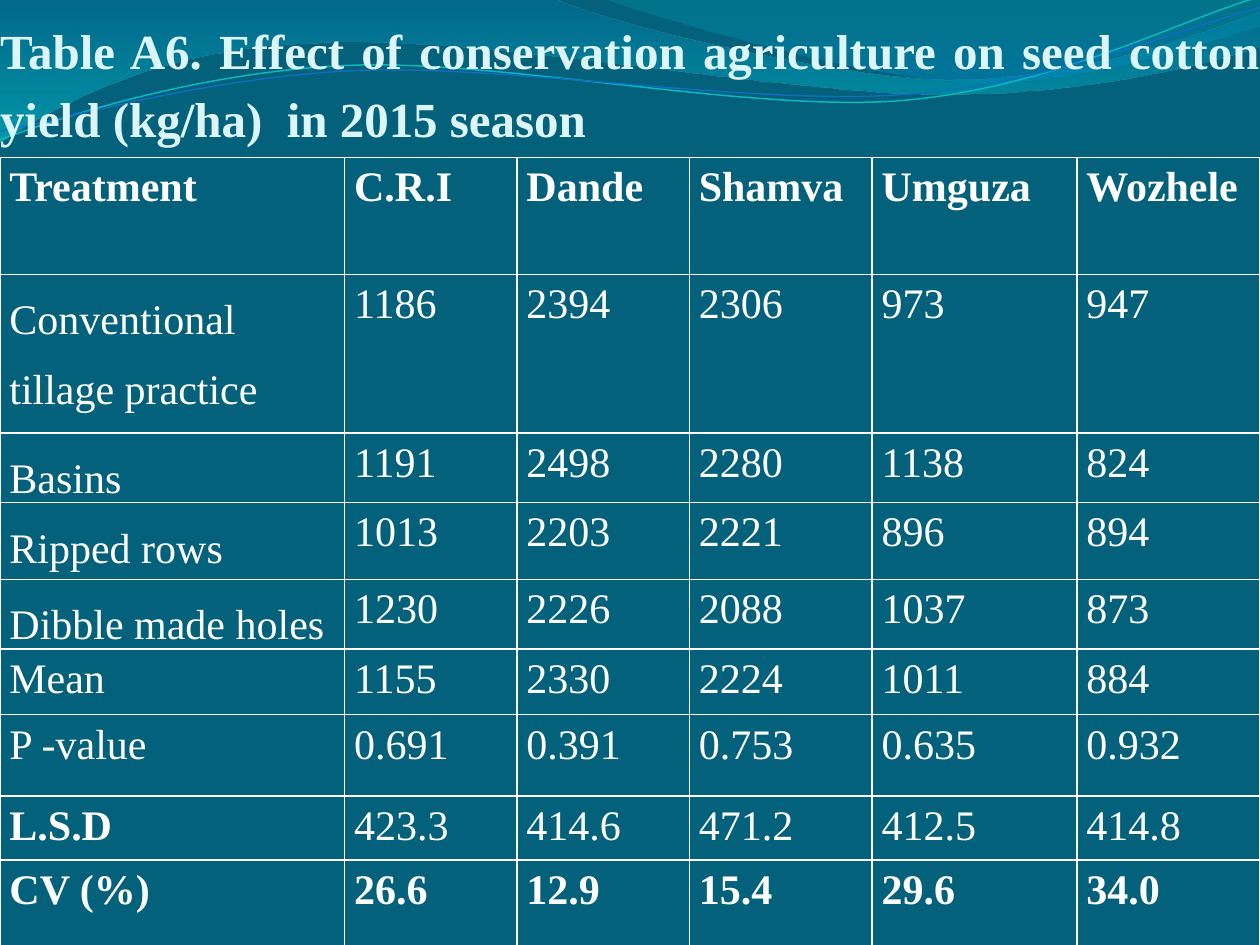
from lxml import etree
from pptx import Presentation
from pptx.dml.color import RGBColor
from pptx.enum.text import MSO_ANCHOR, MSO_AUTO_SIZE, PP_ALIGN
from pptx.oxml.ns import qn
from pptx.util import Pt

JUSTIFY = PP_ALIGN.JUSTIFY
BOTTOM = MSO_ANCHOR.BOTTOM
NO_AUTOFIT = MSO_AUTO_SIZE.NONE

FONT = "Times New Roman"
BACKGROUND, TITLE_COLOR, WHITE = "04617B", "DBF5F9", "FFFFFF"

TITLE = "Table A6. Effect of conservation agriculture on seed cotton yield (kg/ha)  in 2015 season"
ROWS = [
    ("Treatment", "C.R.I", "Dande", "Shamva", "Umguza", "Wozhele"),
    ("Conventional tillage practice", "1186", "2394", "2306", "973", "947"),
    ("Basins", "1191", "2498", "2280", "1138", "824"),
    ("Ripped rows ", "1013", "2203", "2221", "896", "894"),
    ("Dibble made holes", "1230", "2226", "2088", "1037", "873"),
    ("Mean", "1155", "2330", "2224", "1011", "884"),
    ("P -value", "0.691", "0.391", "0.753", "0.635", "0.932"),
    ("L.S.D", "423.3", "414.6", "471.2", "412.5", "414.8"),
    ("CV (%)", "26.6", "12.9", "15.4", "29.6", "34.0"),
]
COL_WIDTHS = [197, 98.5, 98.5, 104.5, 117, 104.5]
ROW_HEIGHTS = [66.8, 90.6, 39.8, 43.8, 39.8, 37.6, 46.5, 36.6, 49.4]
TREATMENT_ROWS = range(1, 5)
BOLD_ROWS = (0, 8)
BOLD_CELLS = [(7, 0)]

# Wave segments: two numbers are a straight line, six a cubic curve.
# Gradient stops: position, colour, opacity in percent.
BANDS = [
    ([(0, 0), (316.8, -0.7), (342.7, 12.2, 478.1, 45.4, 545.8, 45.4),
      (614.2, 45.4, 690, 18.7, 720, 6.5), (720.7, 25.9),
      (707.8, 31.7, 626.4, 54.7, 537.1, 54), (447.8, 54, 275, 20.2, 185, 24.5),
      (92.9, 25.9, 33.1, 59.8, -0.7, 81.4)],
     [(0, "0074A1", 45), (1, "00C6CF", 55)]),
    ([(344.9, -0.7), (366.5, 7.9, 491, 44.6, 553.7, 46.8),
      (616.3, 49.7, 691.9, 23, 720, 15.1), (720, 0)],
     [(0, "00A1A9", 30), (0.8, "008BBF", 45)]),
]
WAVE_LINES = [
    ([(0, 79.9), (34.6, 67, 113.8, 41, 199.4, 37.4),
      (284.4, 33.8, 427, 64.1, 513.4, 57.6), (599.8, 51.1, 675.4, 10.8, 718.6, -1.4)],
     "0AB8BF", 0.85),
    ([(0, 74.9), (33.8, 69.1, 118.1, 43.9, 203.8, 40.3),
      (290.2, 36.7, 429.8, 60.5, 516.2, 54), (601.9, 48.2, 677.5, 15.1, 720, 4.3)],
     "0F6FC6", 0.75),
]


def rgb(value):
    return RGBColor.from_string(value)


def add_wave(s, segments, close):
    """Draw the end points as a freeform, then bend its curved segments."""
    ends = [(Pt(seg[-2]), Pt(seg[-1])) for seg in segments]
    builder = s.shapes.build_freeform(*ends[0])
    builder.add_line_segments(ends[1:], close=close)
    sp = builder.convert_to_shape()
    sp.shadow.inherit = False
    nodes = list(sp._element.iter(qn("a:lnTo")))
    for node, seg in zip(nodes, segments[1:]):
        if len(seg) == 6:
            curve = etree.Element(qn("a:cubicBezTo"))
            for x, y in zip(seg[::2], seg[1::2]):
                etree.SubElement(curve, qn("a:pt"), x=str(Pt(x) - sp.left),
                                 y=str(Pt(y) - sp.top))
            node.getparent().replace(node, curve)
    return sp


def add_band(s, segments, stops):
    sp = add_wave(s, segments, True)
    sp.line.fill.background()
    sp.fill.gradient()
    sp.fill.gradient_angle = 270
    for stop, (position, color, _) in zip(sp.fill.gradient_stops, stops):
        stop.position = position
        stop.color.rgb = rgb(color)
    colors = sp._element.spPr.iter(qn("a:srgbClr"))
    for node, (_, _, opacity) in zip(list(colors), stops):
        etree.SubElement(node, qn("a:alpha"), val=str(opacity * 1000))


def add_wave_line(s, segments, color, width):
    sp = add_wave(s, segments, False)
    sp.fill.background()
    sp.line.color.rgb = rgb(color)
    sp.line.width = Pt(width)


def write(tf, text, size, color, bold, spacing, after=0):
    p = tf.paragraphs[0]
    p.alignment = JUSTIFY
    p.line_spacing = spacing
    p.space_before = Pt(0)
    p.space_after = Pt(after)
    r = p.add_run()
    r.text = text
    r.font.name = FONT
    r.font.size = Pt(size)
    r.font.bold = bold
    r.font.color.rgb = rgb(color)


def add_borders(cell):
    tc_pr = cell._tc.get_or_add_tcPr()
    for side in ("lnL", "lnR", "lnT", "lnB"):
        ln = etree.SubElement(tc_pr, qn(f"a:{side}"), w=str(Pt(1)))
        fill = etree.SubElement(ln, qn("a:solidFill"))
        etree.SubElement(fill, qn("a:srgbClr"), val=WHITE)


def add_title(s):
    title = s.shapes.title
    title.left, title.top, title.width, title.height = Pt(0), Pt(0), Pt(720), Pt(84.2)
    tf = title.text_frame
    tf.word_wrap = True
    tf.auto_size = NO_AUTOFIT
    tf.vertical_anchor = BOTTOM
    tf.margin_left = tf.margin_right = tf.margin_bottom = Pt(0)
    tf.margin_top = Pt(3.6)
    write(tf, TITLE, 28, TITLE_COLOR, True, 1.15)
    s.shapes._spTree.append(title._element)  # in front of the waves


def add_yield_table(s):
    table = s.shapes.add_table(len(ROWS), len(COL_WIDTHS), Pt(0), Pt(90),
                               Pt(sum(COL_WIDTHS)), Pt(sum(ROW_HEIGHTS))).table
    table.horz_banding = False
    for column, width in zip(table.columns, COL_WIDTHS):
        column.width = Pt(width)
    for i, (row, height) in enumerate(zip(ROWS, ROW_HEIGHTS)):
        table.rows[i].height = Pt(height)
        for j, text in enumerate(row):
            cell = table.cell(i, j)
            add_borders(cell)
            cell.fill.background()
            cell.margin_left = cell.margin_right = Pt(5.4)
            cell.margin_top = cell.margin_bottom = Pt(0)
            treatment = j == 0 and i in TREATMENT_ROWS
            tight = treatment or (i == 0 and j > 0)
            bold = i in BOLD_ROWS or (i, j) in BOLD_CELLS
            write(cell.text_frame, text, 24, WHITE, bold,
                  1.5 if treatment else 1.15, 0 if tight else 6)


def main():
    prs = Presentation()
    prs.slide_width, prs.slide_height = Pt(720), Pt(540)
    s = prs.slides.add_slide(prs.slide_layouts[5])
    s.background.fill.solid()
    s.background.fill.fore_color.rgb = rgb(BACKGROUND)
    for band in BANDS:
        add_band(s, *band)
    for wave_line in WAVE_LINES:
        add_wave_line(s, *wave_line)
    add_title(s)
    add_yield_table(s)
    prs.save("out.pptx")


if __name__ == "__main__":
    main()
